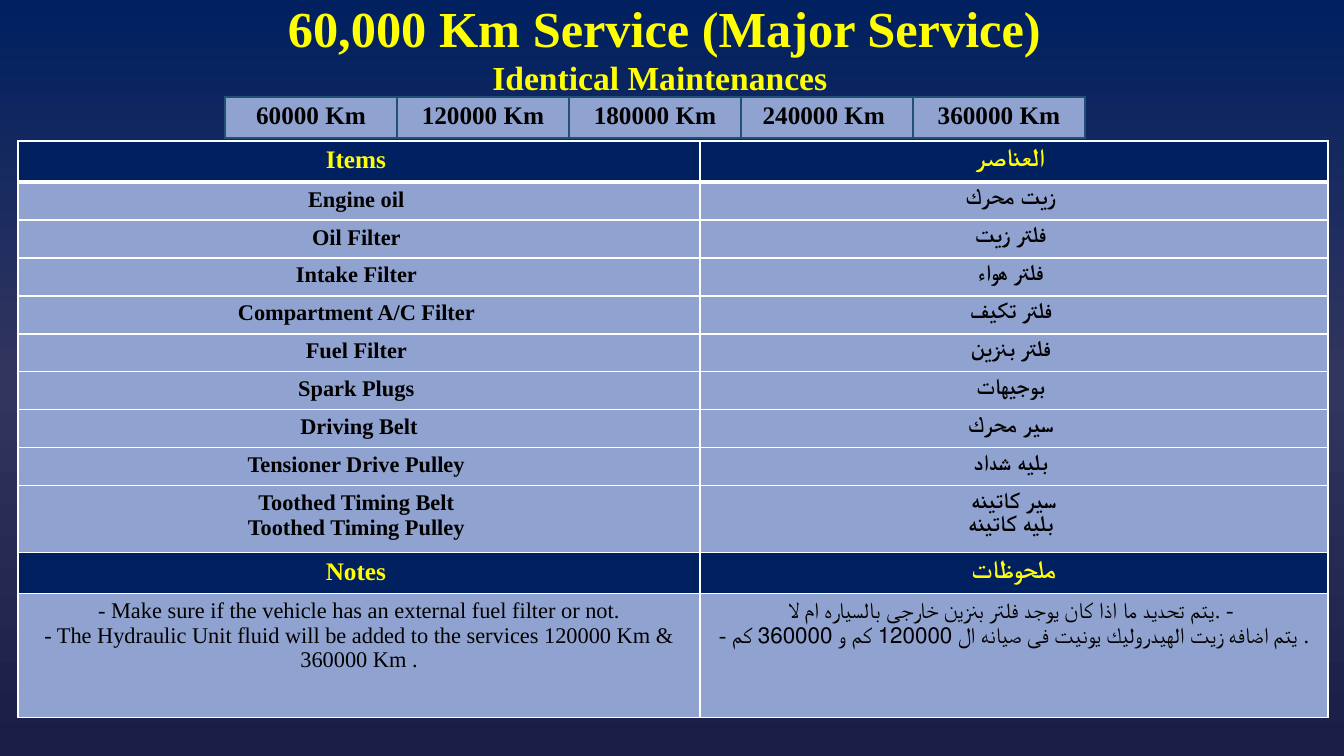
from copy import deepcopy
from dataclasses import dataclass

from lxml.etree import SubElement
from pptx import Presentation
from pptx.dml.color import RGBColor
from pptx.enum.text import MSO_ANCHOR, PP_ALIGN
from pptx.oxml.ns import qn
from pptx.util import Pt


@dataclass(frozen=True)
class Theme:
    """Colours, font and type sizes of the service sheet."""
    font: str = "Times New Roman"
    navy: str = "002060"
    periwinkle: str = "90A2CF"
    yellow: str = "FFFF00"
    black: str = "000000"
    white: str = "FFFFFF"
    steel: str = "224F76"
    backdrop: tuple = ((0, "002060"), (0.5, "32355E"), (1, "1A1E47"))
    title: int = 36
    subtitle: int = 24
    heading: int = 18
    body: int = 16


class ServicePage:
    """Draws styled elements on one slide, measured in px."""
    SCALE = 914400 / 100.8

    def __init__(self, deck, theme):
        self.theme = theme
        self.page = deck.slides.add_slide(deck.slide_layouts[6])

    @classmethod
    def emu(cls, px):
        """Turn px into EMU."""
        return round(px * cls.SCALE)

    def background(self):
        """Fill the slide with the vertical gradient."""
        fill = self.page.background.fill
        fill.gradient()
        fill.gradient_angle = 270
        stop_list = self.page._element.xpath(".//a:gsLst")[0]
        stop_list.insert(1, deepcopy(stop_list[0]))
        for stop, (position, color) in zip(fill.gradient_stops, self.theme.backdrop):
            stop.position = position
            stop.color.rgb = RGBColor.from_string(color)

    def label(self, frame, text, size, color, bold=True):
        """Put centred text in a frame and format its runs."""
        frame.text = text
        for para in frame.paragraphs:
            para.alignment = PP_ALIGN.CENTER
            for span in para.runs:
                span.font.name = self.theme.font
                span.font.size = Pt(size)
                span.font.bold = bold
                span.font.color.rgb = RGBColor.from_string(color)

    def heading(self, text, bounds, size, anchor, spacing):
        """Add a yellow heading."""
        box = self.page.shapes.add_textbox(*map(self.emu, bounds))
        frame = box.text_frame
        frame.word_wrap = True
        frame.vertical_anchor = anchor
        self.label(frame, text, size, self.theme.yellow)
        frame.paragraphs[0].line_spacing = spacing

    def table(self, left, top, widths, heights):
        """Add an empty table with the given columns and rows."""
        bounds = map(self.emu, (left, top, sum(widths), sum(heights)))
        table = self.page.shapes.add_table(len(heights), len(widths), *bounds).table
        for column, width in zip(table.columns, widths):
            column.width = self.emu(width)
        for row, height in zip(table.rows, heights):
            row.height = self.emu(height)
        return table

    def cell(self, cell, text, size, color, fill, line, top=1, bottom=1, bold=True):
        """Fill, border and label one table cell."""
        cell.fill.solid()
        cell.fill.fore_color.rgb = RGBColor.from_string(fill)
        properties = cell._tc.get_or_add_tcPr()
        sides = {"lnL": 1, "lnR": 1, "lnT": top, "lnB": bottom}
        for index, (side, weight) in enumerate(sides.items()):
            border = SubElement(properties, qn(f"a:{side}"), w=str(int(Pt(weight))))
            paint = SubElement(border, qn("a:solidFill"))
            SubElement(paint, qn("a:srgbClr"), val=line)
            properties.insert(index, border)
        self.label(cell.text_frame, text, size, color, bold)

    def items_table(self, rows):
        """Add the bilingual table of items and notes."""
        theme = self.theme
        last = len(rows) - 1
        banners = (0, last - 1)
        heights = [41] + [38] * (last - 3) + [67, 40, 124]
        table = self.table(18, 141, (682, 628), heights)
        for index, row in enumerate(rows):
            banner = index in banners
            for column, text in enumerate(row):
                self.cell(table.cell(index, column), text,
                          theme.heading if banner else theme.body,
                          theme.yellow if banner else theme.black,
                          theme.navy if banner else theme.periwinkle,
                          theme.white,
                          top=3 if index == 1 else 1,
                          bottom=3 if index == 0 else 1,
                          bold=index != last)

    def distance_table(self, distances):
        """Add the strip of service distances."""
        theme = self.theme
        table = self.table(225, 97, [172] * len(distances), [41])
        for column, text in enumerate(distances):
            self.cell(table.cell(0, column), text, theme.heading, theme.black,
                      theme.periwinkle, theme.steel, bottom=2)


ITEMS = (
    ("Items ", "العناصر "),
    ("Engine oil ", "زيت محرك "),
    ("Oil Filter ", "فلتر زيت "),
    ("Intake Filter ", "فلتر هواء "),
    ("Compartment A/C Filter ", "فلتر تكيف "),
    ("Fuel Filter ", "فلتر بنزين "),
    ("Spark Plugs ", "بوجيهات "),
    ("Driving Belt", "سير محرك "),
    ("Tensioner Drive Pulley ", "بليه شداد "),
    ("Toothed Timing Belt \nToothed Timing Pulley ", "سير كاتينه\nبليه كاتينه "),
    ("Notes ", "ملحوظات"),
    ("- Make sure if the vehicle has an external fuel filter or not.\n"
     "- The Hydraulic Unit fluid will be added to the services 120000 Km & 360000 Km .",
     "يتم تحديد ما اذا كان يوجد فلتر بنزين خارجى بالسياره ام لا. - \n"
     "- يتم اضافه زيت الهيدروليك يونيت فى صيانه ال 120000 كم و 360000 كم ."),
)
DISTANCES = ("60000 Km", "120000 Km", "180000 Km", "240000 Km ", "360000 Km")


def main():
    """Build and save the service slide."""
    deck = Presentation()
    deck.slide_width = ServicePage.emu(1344)
    deck.slide_height = ServicePage.emu(756)
    theme = Theme()
    sheet = ServicePage(deck, theme)
    sheet.background()
    sheet.heading("60,000 Km Service (Major Service)", (85, 10, 1159, 42),
                  theme.title, MSO_ANCHOR.MIDDLE, 0.9)
    sheet.heading("Identical Maintenances ", (389, 52, 550, 50),
                  theme.subtitle, MSO_ANCHOR.TOP, 1.0)
    sheet.items_table(ITEMS)
    sheet.distance_table(DISTANCES)
    deck.save("out.pptx")


if __name__ == "__main__":
    main()
